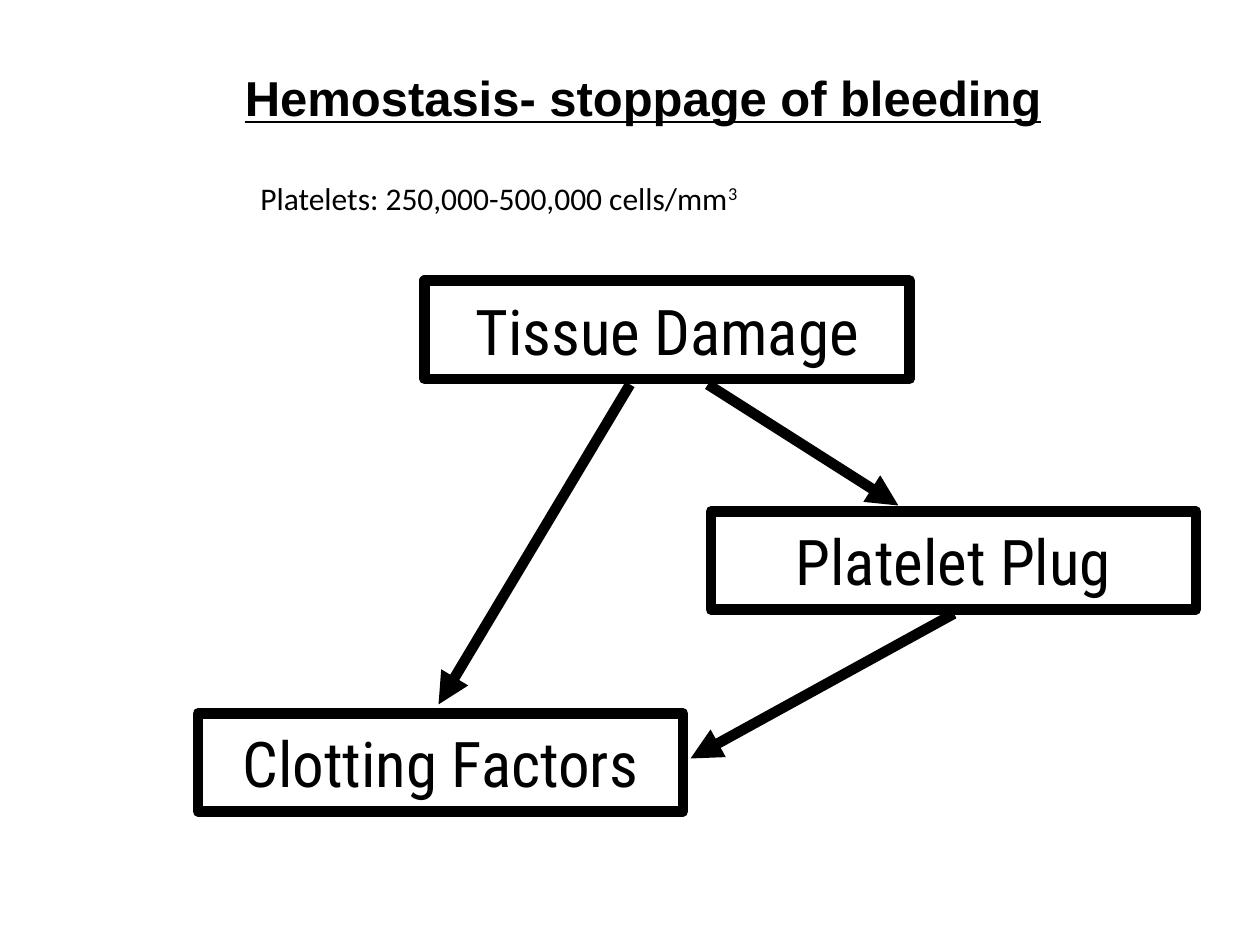
from dataclasses import dataclass
from lxml.etree import SubElement
from pptx import Presentation
from pptx.dml.color import RGBColor
from pptx.enum.shapes import MSO_CONNECTOR, MSO_SHAPE
from pptx.enum.text import MSO_ANCHOR, PP_ALIGN
from pptx.oxml.ns import qn
from pptx.util import Cm, Pt


@dataclass(frozen=True)
class Theme:
    ink: RGBColor = RGBColor(0, 0, 0)
    title_font: str = "Arial"
    body_font: str = "Calibri"
    box_font: str = "Roboto Condensed"
    title_size: Pt = Pt(28)
    body_size: Pt = Pt(18)
    box_size: Pt = Pt(36)
    line_width: Pt = Pt(6)


theme = Theme()


def add_run(p, text, font, size):
    r = p.add_run()
    r.text = text
    r.font.name = font
    r.font.size = size
    r.font.color.rgb = theme.ink
    return r


prs = Presentation()
prs.slide_width, prs.slide_height = Cm(25.4), Cm(19.05)
s = prs.slides.add_slide(prs.slide_layouts[6])

tf = s.shapes.add_textbox(Cm(0), Cm(1.37), Cm(25.93), Cm(1.19)).text_frame
tf.word_wrap = True
tf.margin_left = tf.margin_right = tf.margin_top = tf.margin_bottom = 0
p = tf.paragraphs[0]
p.alignment = PP_ALIGN.CENTER
r = add_run(p, "Hemostasis- stoppage of bleeding", theme.title_font, theme.title_size)
r.font.bold = True
r.font.underline = True

tf = s.shapes.add_textbox(Cm(5), Cm(3.48), Cm(14.76), Cm(1.27)).text_frame
tf.word_wrap = False
p = tf.paragraphs[0]
p.alignment = PP_ALIGN.LEFT
add_run(p, "Platelets: 250,000-500,000 cells/mm", theme.body_font, theme.body_size)
r = add_run(p, "3", theme.body_font, theme.body_size)
r.font._element.set("baseline", "30000")

stages = [
    ("Tissue Damage", 8.56, 5.66),
    ("Platelet Plug", 14.33, 10.31),
    ("Clotting Factors", 3.99, 14.38),
]
for label, left, top in stages:
    sp = s.shapes.add_shape(MSO_SHAPE.RECTANGLE, Cm(left), Cm(top), Cm(9.78), Cm(1.98))
    sp.shadow.inherit = False
    sp.fill.background()
    sp.line.color.rgb = theme.ink
    sp.line.width = theme.line_width
    tf = sp.text_frame
    tf.word_wrap = True
    tf.vertical_anchor = MSO_ANCHOR.MIDDLE
    p = tf.paragraphs[0]
    p.alignment = PP_ALIGN.CENTER
    add_run(p, label, theme.box_font, theme.box_size)

arrows = [
    (14.27, 7.75, 18.11, 10.19),
    (12.7, 7.75, 8.84, 14.2),
    (19.23, 12.37, 13.92, 15.29),
]
for ends in arrows:
    arrow = s.shapes.add_connector(MSO_CONNECTOR.STRAIGHT, *map(Cm, ends))
    arrow.line.color.rgb = theme.ink
    arrow.line.width = theme.line_width
    SubElement(arrow.line._get_or_add_ln(), qn("a:tailEnd"), type="triangle")
    SubElement(arrow._element.spPr, qn("a:effectLst"))

prs.save("out.pptx")
